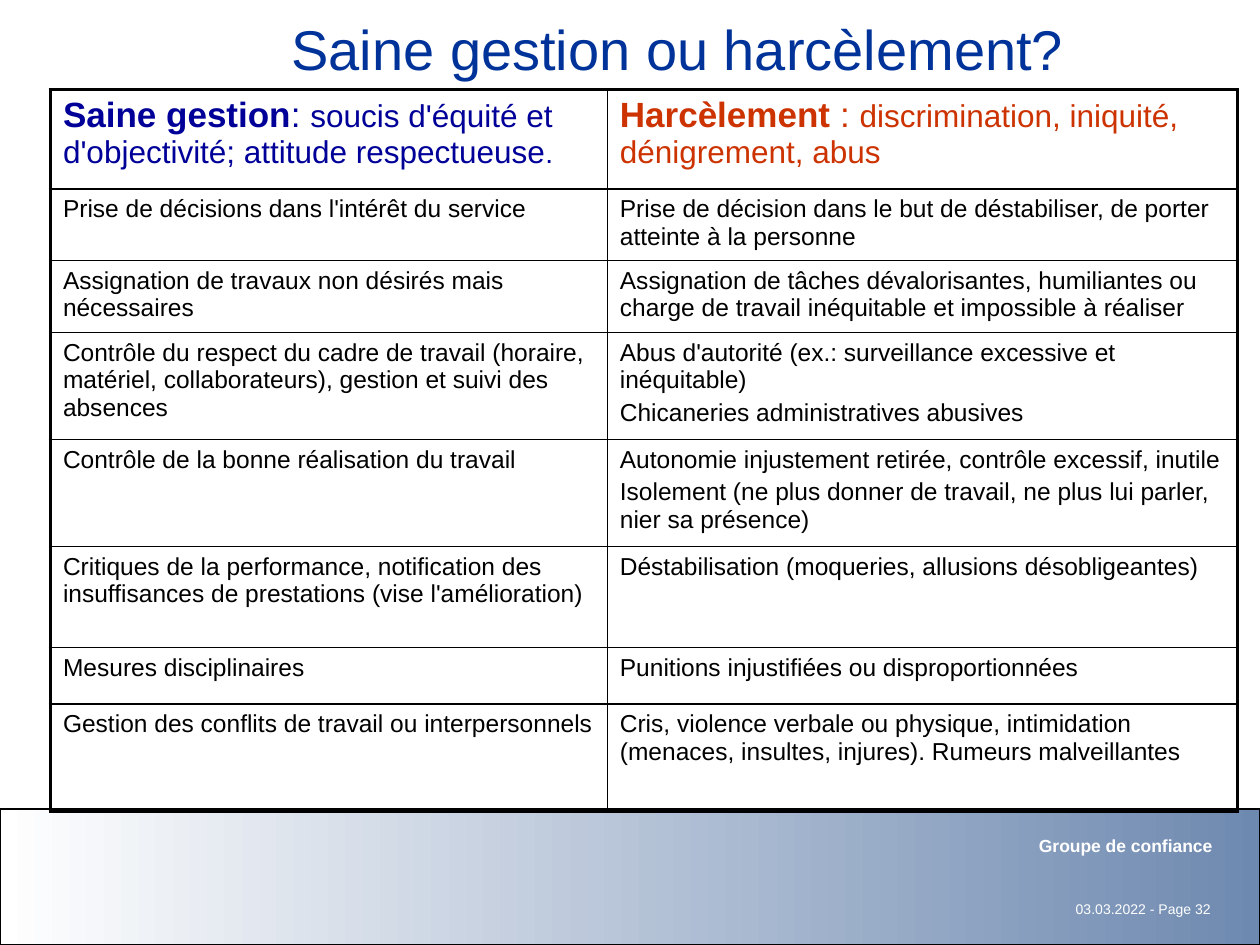
from dataclasses import dataclass
from typing import NamedTuple

from lxml.etree import SubElement
from pptx import Presentation
from pptx.dml.color import RGBColor
from pptx.enum.shapes import MSO_SHAPE as Shape
from pptx.enum.text import MSO_ANCHOR as Anchor, MSO_AUTO_SIZE as Fit, PP_ALIGN as Align
from pptx.oxml.ns import qn
from pptx.util import Inches, Pt

COLS, ROWS = 100, 75
UNIT = Inches(0.1)
FONT = "Arial"
BLACK, WHITE, NAVY, RED = "000000", "FFFFFF", "000099", "CC3300"
THIN, THICK = 1, 2.25


class Box(NamedTuple):
    col: float
    row: float
    cols: float
    rows: float

    def emu(self) -> list[int]:
        return [round(v * UNIT) for v in self]


@dataclass
class Run:
    text: str
    size: float = 14
    color: str = BLACK
    bold: bool = False


@dataclass
class Label:
    box: Box
    run: Run


def rgb(value: str) -> RGBColor:
    return RGBColor.from_string(value)


def set_attrs(obj, values: dict) -> None:
    for name, value in values.items():
        setattr(obj, name, value)


def add_run(p, run: Run) -> None:
    r = p.add_run()
    r.text = run.text
    set_attrs(r.font, {"name": FONT, "size": Pt(run.size), "bold": run.bold})
    r.font.color.rgb = rgb(run.color)


def place(sp, box: Box) -> None:
    set_attrs(sp, dict(zip(("left", "top", "width", "height"), box.emu())))


def draw_band(s, box: Box) -> None:
    sp = s.shapes.add_shape(Shape.RECTANGLE, *box.emu())
    sp.shadow.inherit = False
    sp.fill.gradient()
    sp.fill.gradient_angle = 0
    for stop, color, position in zip(sp.fill.gradient_stops, (WHITE, "6E89B0"), (0, 1)):
        stop.color.rgb = rgb(color)
        stop.position = position
    sp.line.color.rgb = rgb(BLACK)
    sp.line.width = Pt(1)


def draw_label(s, label: Label) -> None:
    tf = s.shapes.add_textbox(*label.box.emu()).text_frame
    set_attrs(tf, {"word_wrap": True, "auto_size": Fit.NONE})
    p = tf.paragraphs[0]
    p.alignment = Align.RIGHT
    add_run(p, label.run)


def draw_title(s, label: Label) -> None:
    sp = s.shapes.title
    place(sp, label.box)
    tf = sp.text_frame
    set_attrs(tf, {"word_wrap": True, "auto_size": Fit.NONE, "vertical_anchor": Anchor.MIDDLE})
    p = tf.paragraphs[0]
    p.alignment = Align.CENTER
    add_run(p, label.run)


def set_borders(cell, widths: dict[str, float]) -> None:
    tc_pr = cell._tc.get_or_add_tcPr()
    for side, width in widths.items():
        ln = SubElement(tc_pr, qn(f"a:ln{side}"), w=str(Pt(width)))
        SubElement(SubElement(ln, qn("a:solidFill")), qn("a:srgbClr"), val=BLACK)


def fill_cell(cell, paragraphs: list[list[Run]]) -> None:
    tf = cell.text_frame
    for i, runs in enumerate(paragraphs):
        p = tf.add_paragraph() if i else tf.paragraphs[0]
        if i:
            p.space_before = Pt(2.8)
        for run in runs:
            add_run(p, run)


def draw_table(s, box: Box, widths: list[float], heights: list[float], rows: list) -> None:
    table = s.shapes.add_table(len(heights), len(widths), *box.emu()).table
    set_attrs(table, {"first_row": False, "horz_banding": False})
    for column, width in zip(table.columns, widths):
        column.width = round(width * UNIT)
    for row, height in zip(table.rows, heights):
        row.height = round(height * UNIT)
    last_row, last_col = len(heights) - 1, len(widths) - 1
    for i, row in enumerate(rows):
        for j, paragraphs in enumerate(row):
            cell = table.cell(i, j)
            edges = {"L": j == 0, "R": j == last_col, "T": i == 0, "B": i == last_row}
            set_borders(cell, {side: THICK if outer else THIN for side, outer in edges.items()})
            cell.fill.background()
            fill_cell(cell, paragraphs)


HEADER = [
    [[Run("Saine gestion", 20, NAVY, True), Run(": ", 20, NAVY),
      Run("soucis d'équité et d'objectivité; attitude respectueuse", 18, NAVY),
      Run(".", 16, NAVY)]],
    [[Run("Harcèlement", 20, RED, True), Run(" : ", 20, RED),
      Run("discrimination, iniquité, dénigrement, abus", 18, RED)]],
]

COMPARISONS = [
    (["Prise de décisions dans l'intérêt du service"],
     ["Prise de décision dans le but de déstabiliser, de porter atteinte à la personne"]),
    (["Assignation de travaux non désirés mais nécessaires"],
     ["Assignation de tâches dévalorisantes, humiliantes ou charge de travail "
      "inéquitable et impossible à réaliser"]),
    (["Contrôle du respect du cadre de travail (horaire, matériel, collaborateurs), "
      "gestion et suivi des absences"],
     ["Abus d'autorité (ex.: surveillance excessive et inéquitable)",
      "Chicaneries administratives abusives"]),
    (["Contrôle de la bonne réalisation du travail"],
     ["Autonomie injustement retirée, contrôle excessif, inutile",
      "Isolement (ne plus donner de travail, ne plus lui parler, nier sa présence)"]),
    (["Critiques de la performance, notification des insuffisances de prestations "
      "(vise l'amélioration)"],
     ["Déstabilisation (moqueries, allusions désobligeantes)"]),
    (["Mesures disciplinaires"],
     ["Punitions injustifiées ou disproportionnées"]),
    (["Gestion des conflits de travail ou interpersonnels"],
     ["Cris, violence verbale ou physique, intimidation (menaces, insultes, injures). "
      "Rumeurs malveillantes"]),
]

TITLE = Label(Box(17.1, 0.6, 73.4, 6.4), Run("Saine gestion ou harcèlement?", 32, "003399"))
LABELS = [
    Label(Box(83.4, 71, 13.7, 2.3), Run("03.03.2022 - Page 32", 8, WHITE)),
    Label(Box(15.2, 65.8, 82, 1.2), Run("Groupe de confiance", 10, WHITE, True)),
]


def main() -> None:
    prs = Presentation()
    set_attrs(prs, {"slide_width": COLS * UNIT, "slide_height": ROWS * UNIT})
    s = prs.slides.add_slide(prs.slide_layouts[5])
    draw_band(s, Box(0, 64.2, COLS, 10.8))
    for label in LABELS:
        draw_label(s, label)
    draw_title(s, TITLE)
    body = [[[[Run(text)] for text in texts] for texts in pair] for pair in COMPARISONS]
    draw_table(s, Box(4, 7.1, 94.2, 57.4), [44.2, 50],
               [7.9, 5.7, 5.7, 8.5, 8.5, 8, 4.5, 8.5], [HEADER, *body])
    prs.save("out.pptx")


if __name__ == "__main__":
    main()
